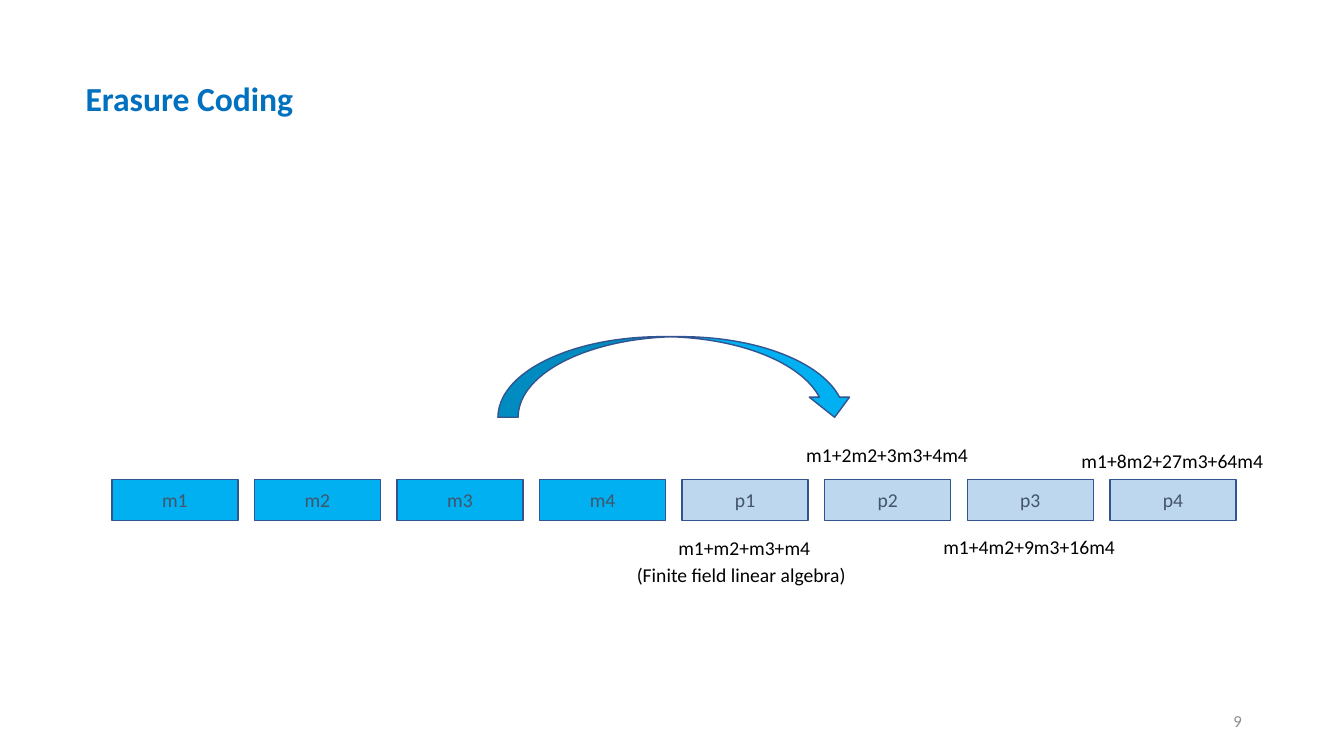
from dataclasses import dataclass

import pptx
import pptx.dml.color
import pptx.enum.shapes
import pptx.enum.text
import pptx.util

Pt = pptx.util.Pt
Align = pptx.enum.text.PP_ALIGN
Anchor = pptx.enum.text.MSO_ANCHOR
Preset = pptx.enum.shapes.MSO_SHAPE

COLORS = {
    "title": "0070C0",
    "message": "00B0F0",
    "parity": "BDD7EE",
    "outline": "325491",
    "block_text": "44546A",
    "label": "000000",
    "page_number": "8C8C8C",
}
FONT = "Calibri"
BLOCK_LEFT, BLOCK_TOP, BLOCK_PITCH = 79.9, 342.7, 101.84
BLOCK_WIDTH, BLOCK_HEIGHT = 90, 29


@dataclass
class Box:
    left: float
    top: float
    width: float
    height: float


@dataclass
class Label:
    text: str
    box: Box
    size: float = 14
    color: str = "label"
    bold: bool = False
    align: Align = Align.LEFT
    anchor: Anchor = Anchor.TOP
    wrap: bool = False


LABELS = [
    Label("Erasure Coding", Box(54, 51.8, 164.2, 36), 24, "title", bold=True),
    Label("m1+m2+m3+m4", Box(477.4, 379.4, 109.4, 24.5)),
    Label("m1+2m2+3m3+4m4", Box(568.8, 312.5, 131, 24.5)),
    Label("m1+4m2+9m3+16m4", Box(666.7, 378.7, 138.2, 24.5)),
    Label("m1+8m2+27m3+64m4", Box(765.4, 316.8, 145.4, 24.5)),
    Label("(Finite field linear algebra)", Box(447.8, 398.9, 165.6, 24.5)),
    Label("9", Box(678.2, 500.4, 216, 28.8), 12, "page_number",
          align=Align.RIGHT, anchor=Anchor.MIDDLE, wrap=True),
]


def color(name: str) -> pptx.dml.color.RGBColor:
    return pptx.dml.color.RGBColor.from_string(COLORS[name])


def lengths(box: Box) -> list[pptx.util.Length]:
    return [Pt(value) for value in (box.left, box.top, box.width, box.height)]


def write(frame, text: str, size: float, color_name: str, align: Align,
          anchor: Anchor, bold: bool = False) -> None:
    frame.text = text
    frame.vertical_anchor = anchor
    para = frame.paragraphs[0]
    para.alignment = align
    font = para.runs[0].font
    font.name, font.size, font.bold = FONT, Pt(size), bold
    font.color.rgb = color(color_name)


def add_outlined(page, preset: Preset, box: Box, fill: str):
    shape = page.shapes.add_shape(preset, *lengths(box))
    shape.shadow.inherit = False
    shape.fill.solid()
    shape.fill.fore_color.rgb = color(fill)
    shape.line.color.rgb = color("outline")
    shape.line.width = Pt(1)
    return shape


def add_block(page, index: int, name: str, fill: str) -> None:
    """Draw one storage block at its place in the row."""
    box = Box(BLOCK_LEFT + index * BLOCK_PITCH, BLOCK_TOP, BLOCK_WIDTH, BLOCK_HEIGHT)
    block = add_outlined(page, Preset.RECTANGLE, box, fill)
    write(block.text_frame, name, 14, "block_text", Align.CENTER, Anchor.MIDDLE)


def add_label(page, label: Label) -> None:
    frame = page.shapes.add_textbox(*lengths(label.box)).text_frame
    frame.word_wrap = label.wrap
    if not label.wrap:
        frame.auto_size = pptx.enum.text.MSO_AUTO_SIZE.SHAPE_TO_FIT_TEXT
    write(frame, label.text, label.size, label.color, label.align,
          label.anchor, label.bold)


def main() -> None:
    deck = pptx.Presentation()
    deck.slide_width, deck.slide_height = Pt(960), Pt(540)
    page = deck.slides.add_slide(deck.slide_layouts[6])
    for index in range(8):
        kind = "message" if index < 4 else "parity"
        add_block(page, index, f"{kind[0]}{index % 4 + 1}", kind)
    for label in LABELS:
        add_label(page, label)
    add_outlined(page, Preset.CURVED_DOWN_ARROW, Box(355.7, 240.5, 254.9, 57.6), "message")
    deck.save("out.pptx")


if __name__ == "__main__":
    main()
